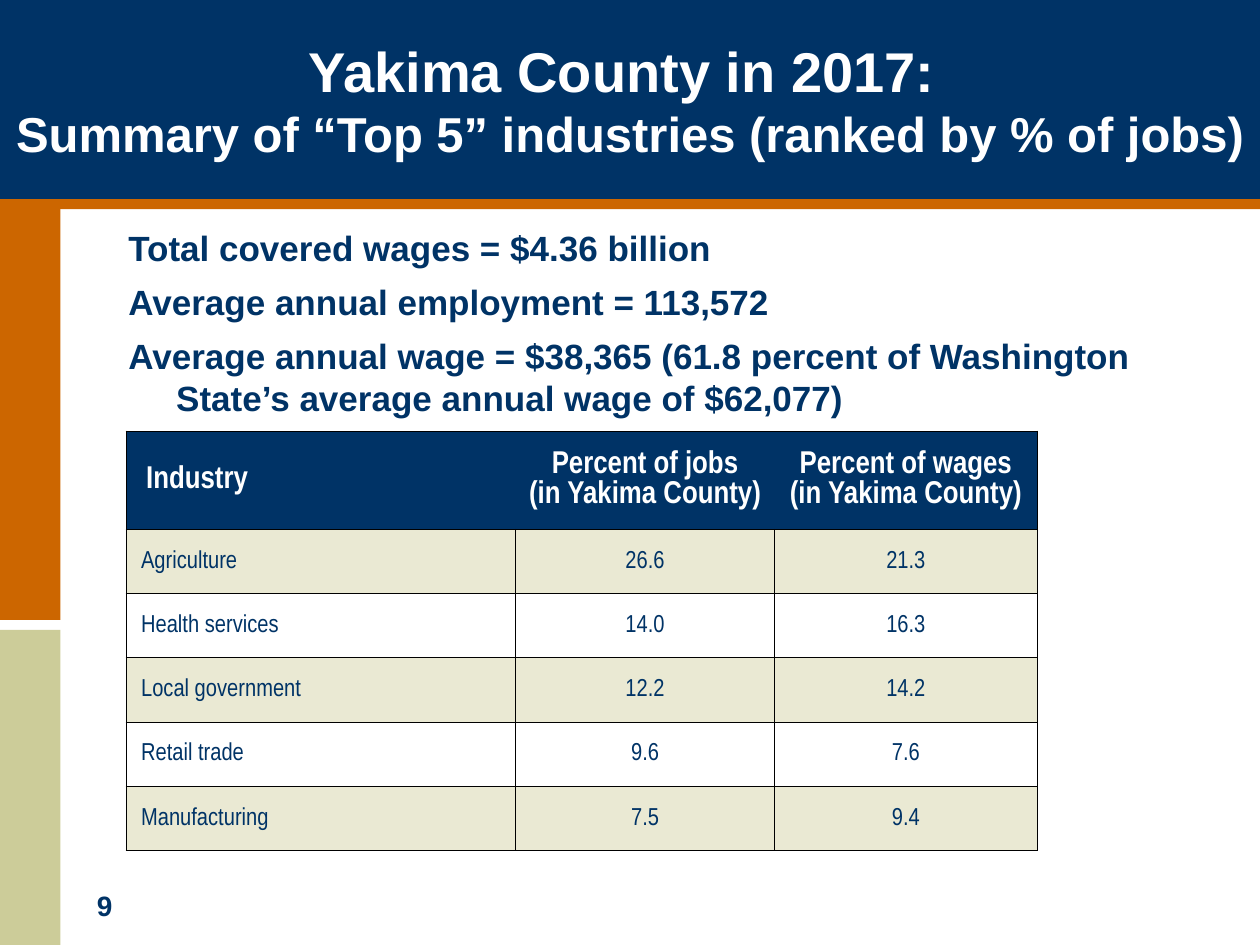
from lxml.etree import SubElement
from pptx import Presentation
from pptx.dml.color import RGBColor
from pptx.enum.shapes import MSO_SHAPE
from pptx.enum.text import MSO_ANCHOR, MSO_AUTO_SIZE, PP_ALIGN
from pptx.oxml.ns import qn
from pptx.util import Inches, Pt

NAVY, ORANGE, TAN, CREAM, WHITE = "003366", "CC6600", "CCCC99", "EAE9D3", "FFFFFF"
TITLE = [("Yakima County in 2017: ", 32), ("Summary of “Top 5” industries (ranked by % of jobs)", 28)]
FACTS = [
    "Total covered wages = $4.36 billion",
    "Average annual employment = 113,572",
    "Average annual wage = $38,365 (61.8 percent of Washington State’s average annual wage of $62,077)",
]
ROWS = [
    ("Industry", "Percent of jobs\n(in Yakima County)", "Percent of wages\n(in Yakima County)"),
    ("Agriculture", "26.6", "21.3"),
    ("Health services", "14.0", "16.3"),
    ("Local government", "12.2", "14.2"),
    ("Retail trade", "9.6", "7.6"),
    ("Manufacturing", "7.5", "9.4"),
]
BLOCKS = [
    (0, 0.5, 0.48, 4.42, ORANGE),
    (0, 0, 10, 1.58, NAVY),
    (0, 5, 0.48, 2.5, TAN),
    (0, 1.58, 10, 0.08, ORANGE),
]
COLUMN_WIDTHS = [3.09, 2.06, 2.08]
HEADER_HEIGHT, ROW_HEIGHT = 0.78, 0.51


def color(value):
    return RGBColor.from_string(value)


def add_run(paragraph, text, size, ink, font="Arial", bold=True):
    run = paragraph.add_run()
    run.text = text
    run.font.name, run.font.size, run.font.bold = font, Pt(size), bold
    run.font.color.rgb = color(ink)


def add_blocks(slide):
    for *box, fill in BLOCKS:
        block = slide.shapes.add_shape(MSO_SHAPE.RECTANGLE, *map(Inches, box))
        block.shadow.inherit = False
        block.fill.solid()
        block.fill.fore_color.rgb = color(fill)
        block.line.fill.background()


def format_title(slide):
    title = slide.shapes.title
    title.left, title.top, title.width, title.height = map(Inches, (0, 0, 10, 1.58))
    title._element.getparent().append(title._element)
    frame = title.text_frame
    frame.auto_size = MSO_AUTO_SIZE.NONE
    frame.vertical_anchor = MSO_ANCHOR.MIDDLE
    paragraph = frame.paragraphs[0]
    paragraph.alignment = PP_ALIGN.CENTER
    for index, (text, size) in enumerate(TITLE):
        if index:
            paragraph.add_line_break()
        add_run(paragraph, text, size, WHITE)


def add_text(slide, box, lines, size):
    frame = slide.shapes.add_textbox(*map(Inches, box)).text_frame
    frame.word_wrap = True
    for index, line in enumerate(lines):
        paragraph = frame.add_paragraph() if index else frame.paragraphs[0]
        if index:
            paragraph.space_before = Pt(6.8)
        add_run(paragraph, line, size, NAVY)
    return frame


def add_facts(slide):
    frame = add_text(slide, (0.92, 1.75, 8.42, 1.67), FACTS, 20)
    for paragraph in frame.paragraphs:
        properties = paragraph._p.get_or_add_pPr()
        properties.set("marL", str(Inches(0.38)))
        properties.set("indent", str(Inches(-0.38)))


def set_borders(cell, sides):
    properties = cell._tc.get_or_add_tcPr()
    for index, side in enumerate("LRTB"):
        line = properties.makeelement(qn(f"a:ln{side}"), {"w": str(Pt(0.5))})
        properties.insert(index, line)
        if side in sides:
            fill = SubElement(line, qn("a:solidFill"))
            SubElement(fill, qn("a:srgbClr"), val="000000")
        else:
            SubElement(line, qn("a:noFill"))


def fill_cell(cell, text, row, column):
    header = row == 0
    cell.vertical_anchor = MSO_ANCHOR.MIDDLE
    first_inset = 0.16 if header else 0.12
    cell.margin_left = Inches(0.01 if column else first_inset)
    cell.margin_right = cell.margin_top = Inches(0.01)
    cell.margin_bottom = 0
    cell.fill.solid()
    cell.fill.fore_color.rgb = color(NAVY if header else CREAM if row % 2 else WHITE)
    for index, line in enumerate(text.split("\n")):
        paragraph = cell.text_frame.add_paragraph() if index else cell.text_frame.paragraphs[0]
        paragraph.alignment = PP_ALIGN.CENTER if column else PP_ALIGN.LEFT
        add_run(paragraph, line, 18 if header else 14, WHITE if header else NAVY, "Arial Narrow", header)
    set_borders(cell, ("LTB", "TB", "RTB")[column] if header else "LRTB")


def add_industry_table(slide):
    heights = [HEADER_HEIGHT] + [ROW_HEIGHT] * (len(ROWS) - 1)
    box = map(Inches, (1, 3.42, sum(COLUMN_WIDTHS), sum(heights)))
    table = slide.shapes.add_table(len(ROWS), len(COLUMN_WIDTHS), *box).table
    for column, width in zip(table.columns, COLUMN_WIDTHS):
        column.width = Inches(width)
    for row, height in zip(table.rows, heights):
        row.height = Inches(height)
    for row, texts in enumerate(ROWS):
        for column, text in enumerate(texts):
            fill_cell(table.cell(row, column), text, row, column)


def main():
    """Build the Yakima County industry summary slide."""
    presentation = Presentation()
    presentation.slide_width, presentation.slide_height = Inches(10), Inches(7.5)
    slide = presentation.slides.add_slide(presentation.slide_layouts[5])
    add_blocks(slide)
    add_text(slide, (0.67, 7, 0.67, 0.37), ["9"], 16)
    format_title(slide)
    add_facts(slide)
    add_industry_table(slide)
    presentation.save("out.pptx")


if __name__ == "__main__":
    main()
